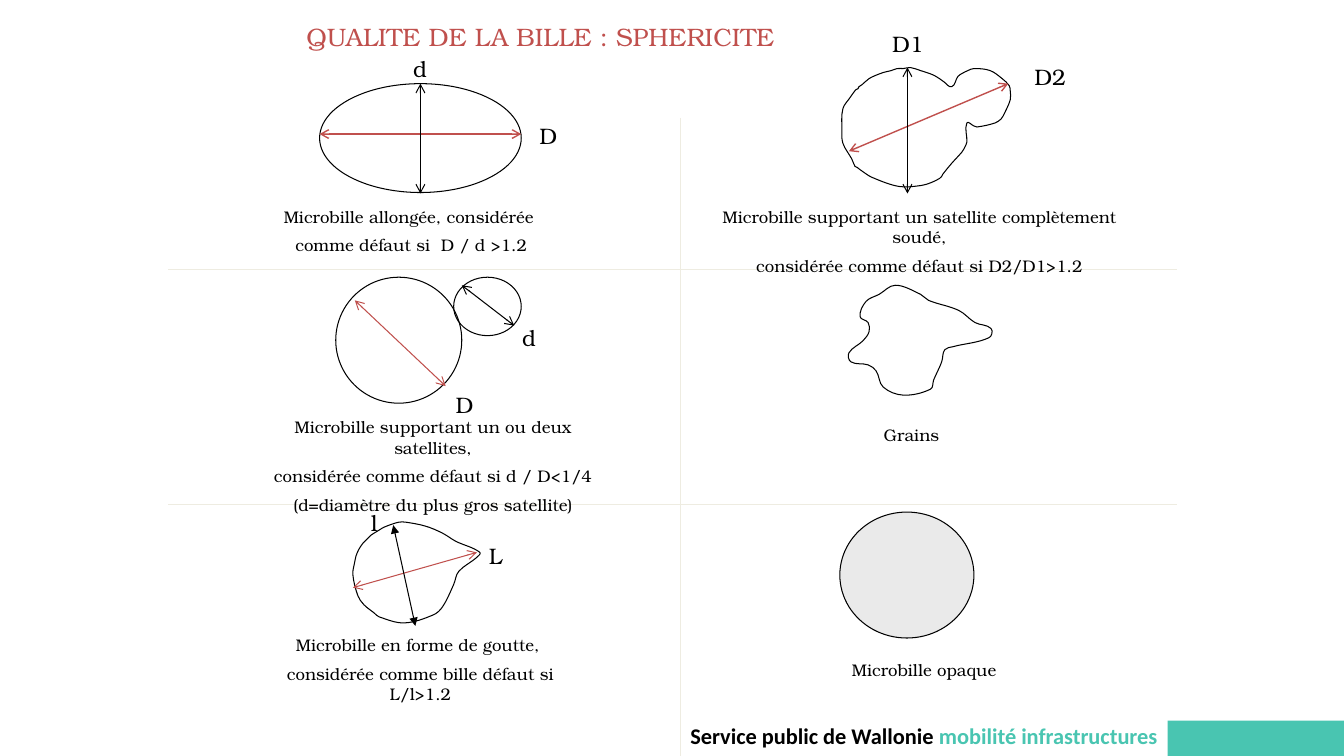
from dataclasses import dataclass
from math import dist

from lxml import etree
from pptx import Presentation
from pptx.dml.color import RGBColor
from pptx.enum.shapes import MSO_CONNECTOR, MSO_SHAPE
from pptx.enum.text import MSO_ANCHOR, MSO_AUTO_SIZE, PP_ALIGN
from pptx.oxml.ns import qn
from pptx.shapes.shapetree import SlideShapes
from pptx.util import Inches, Pt

BLACK = RGBColor(0x00, 0x00, 0x00)
RED = RGBColor(0xC0, 0x50, 0x4D)
TEAL = RGBColor(0x49, 0xC5, 0xB1)
GREY = RGBColor(0xEA, 0xEA, 0xEA)
IVORY = RGBColor(0xEE, 0xEC, 0xE1)
OVAL, RECTANGLE = MSO_SHAPE.OVAL, MSO_SHAPE.RECTANGLE
STRAIGHT = MSO_CONNECTOR.STRAIGHT
LEFT, CENTER, RIGHT = PP_ALIGN.LEFT, PP_ALIGN.CENTER, PP_ALIGN.RIGHT
MIDDLE, TOP = MSO_ANCHOR.MIDDLE, MSO_ANCHOR.TOP
FIT = MSO_AUTO_SIZE.SHAPE_TO_FIT_TEXT
SERIF = "TeX Gyre Bonum"

GRID_LEFT, GRID_MIDDLE, GRID_RIGHT = 1.67, 6.75, 11.67
ROW_TOPS = (0.33, 2.67, 5)

DROP = [
    (42, 2), (31, 6), (26, 9), (21, 12), (18, 14), (17, 15), (13, 19), (10, 22),
    (6, 28), (3, 35), (2, 40), (0, 53), (5, 74), (11, 83), (21, 91), (26, 95),
    (51, 101), (80, 93), (89, 85), (100, 63), (105, 50), (123, 36), (126, 31),
    (102, 20), (89, 12), (72, 5), (52, 1), (46, 1)]
FUSED = [
    (57, 1), (51, 3), (43, 5), (35, 8), (29, 11), (22, 17), (19, 19), (18, 21),
    (16, 22), (15, 23), (10, 30), (3, 41), (2, 61), (3, 75), (12, 91), (15, 98),
    (17, 99), (21, 102), (32, 109), (59, 118), (81, 117), (91, 114), (99, 110),
    (101, 108), (102, 106), (111, 95), (121, 84), (123, 81), (124, 79), (126, 74),
    (126, 55), (133, 58), (136, 59), (154, 55), (160, 51), (162, 48), (169, 32),
    (169, 23), (168, 18), (161, 11), (149, 3), (133, 1), (127, 3), (121, 6),
    (117, 9), (111, 19), (103, 14), (94, 8), (80, 3), (70, 0), (63, 1)]
GRAIN = [
    (30, 9), (17, 16), (11, 31), (19, 37), (20, 46), (14, 55), (0, 67), (2, 76),
    (19, 79), (27, 85), (34, 101), (54, 109), (81, 103), (84, 94), (92, 76),
    (95, 64), (103, 61), (139, 52), (141, 43), (125, 37), (109, 25), (79, 15),
    (71, 9), (46, 0)]


def control_point(knot, before, after, reach):
    """Return the point a third of reach from the knot, along its tangent."""
    factor = reach / 3 / dist(before, after)
    return tuple(k + (a - b) * factor for k, b, a in zip(knot, before, after))


def round_off(outline, knots):
    """Turn the straight segments of a closed outline into cubic curves."""
    left, top = (min(axis) for axis in zip(*knots))
    segments = list(outline._element.iter(qn("a:lnTo")))
    for i, segment in enumerate(segments):
        before, start, end, after = (knots[(i + k) % len(knots)] for k in (-1, 0, 1, 2))
        reach = dist(start, end)
        controls = (control_point(start, before, end, reach),
                    control_point(end, after, start, reach))
        segment.tag = qn("a:cubicBezTo")
        for position, (x, y) in enumerate(controls):
            point = etree.Element(qn("a:pt"), x=str(int(Inches((x - left) / 100))),
                                  y=str(int(Inches((y - top) / 100))))
            segment.insert(position, point)


def style_shape(shape, fill=None, line=BLACK):
    """Give a shape a flat fill and a thin line, or none of either."""
    shape.shadow.inherit = False
    if fill is None:
        shape.fill.background()
    else:
        shape.fill.solid()
        shape.fill.fore_color.rgb = fill
    if line is None:
        shape.line.fill.background()
    else:
        shape.line.color.rgb = line
        shape.line.width = Pt(0.75)


def add_line(shapes, ends, color, width):
    """Draw a straight line without shadow and return it with its outline element."""
    line = shapes.add_connector(STRAIGHT, *map(Inches, ends))
    line.line.color.rgb = color
    line.line.width = Pt(width)
    etree.SubElement(line._element.spPr, qn("a:effectLst"))
    return line._element.spPr.find(qn("a:ln"))


def add_text(shapes, box, paragraphs, size, align=LEFT, font=SERIF, bold=False, anchor=TOP):
    """Write paragraphs, each a list of text and colour pairs."""
    frame = shapes.add_textbox(*map(Inches, box)).text_frame
    for name, value in {"word_wrap": True, "auto_size": FIT, "vertical_anchor": anchor}.items():
        setattr(frame, name, value)
    for i, runs in enumerate(paragraphs):
        paragraph = frame.add_paragraph() if i else frame.paragraphs[0]
        paragraph.alignment = align
        if i:
            paragraph.space_before = Pt(size / 2)
        for text, color in runs:
            run = paragraph.add_run()
            run.text = text
            for name, value in {"name": font, "size": Pt(size), "bold": bold}.items():
                setattr(run.font, name, value)
            run.font.color.rgb = color


@dataclass
class Cell:
    """A cell of the defect grid; its parts are placed from its top left corner."""
    shapes: SlideShapes
    left: float
    top: float

    def ellipse(self, x, y, width, height, fill=None):
        """Draw a round bead."""
        box = (self.left + x, self.top + y, width, height)
        style_shape(self.shapes.add_shape(OVAL, *map(Inches, box)), fill)

    def outline(self, x, y, knots):
        """Draw an irregular bead through knots in hundredths of an inch."""
        builder = self.shapes.build_freeform(*knots[0], scale=Inches(0.01))
        builder.add_line_segments(knots[1:] + knots[:1], close=True)
        bead = builder.convert_to_shape(Inches(self.left + x), Inches(self.top + y))
        for point in bead._element.iter(qn("a:pt")):
            for axis in ("x", "y"):
                point.set(axis, str(int(point.get(axis)) * int(Inches(0.01))))
        outline = bead._element.spPr.find(".//" + qn("a:path"))
        outline.set("w", str(int(bead.width)))
        outline.set("h", str(int(bead.height)))
        round_off(bead, knots)
        style_shape(bead)

    def diameter(self, x1, y1, x2, y2, color=BLACK, width=0.75, tip="arrow"):
        """Draw a double-headed arrow across a bead."""
        ends = (self.left + x1, self.top + y1, self.left + x2, self.top + y2)
        arrow = add_line(self.shapes, ends, color, width)
        for end in ("a:headEnd", "a:tailEnd"):
            etree.SubElement(arrow, qn(end), type=tip)

    def label(self, x, y, text, width=0.42):
        """Name a diameter."""
        box = (self.left + x, self.top + y, width, 0.37)
        add_text(self.shapes, box, [[(text, BLACK)]], 16)

    def caption(self, x, y, width, *lines):
        """Write the centred description of the defect."""
        box = (self.left + x, self.top + y, width, 0.3 * len(lines))
        add_text(self.shapes, box, [[(line, BLACK)] for line in lines], 12, CENTER)


def draw_elongated(cell):
    """Draw the elongated bead."""
    cell.ellipse(1.5, 0.5, 2, 1.08)
    cell.caption(0.91, 1.67, 3, "Microbille allongée, considérée ", "comme défaut si  D / d >1.2")
    cell.diameter(1.5, 1, 3.5, 1, RED, 1)
    cell.label(3.58, 0.83, "D")
    cell.diameter(2.5, 0.5, 2.5, 1.59)
    cell.label(2.33, 0.17, "d", 0.33)


def draw_fused(cell):
    """Draw the bead with a fully fused satellite."""
    cell.outline(1.58, 0.34, FUSED)
    cell.caption(0.08, 1.67, 4.58, "Microbille supportant un satellite complètement soudé,",
                 "considérée comme défaut si D2/D1>1.2")
    cell.diameter(1.67, 1.17, 3.25, 0.5, RED, 1)
    cell.label(3.41, 0.25, "D2", 0.58)
    cell.diameter(2.25, 0.34, 2.25, 1.59)
    cell.label(2, -0.08, "D1", 0.58)


def draw_satellite(cell):
    """Draw the bead with a touching satellite."""
    cell.ellipse(1.66, 0.08, 1.25, 1.25)
    cell.ellipse(2.83, 0.08, 0.67, 0.58)
    cell.caption(0.75, 1.42, 3.75, "Microbille supportant un ou deux satellites,",
                 "considérée comme défaut si d / D<1/4", "(d=diamètre du plus gros satellite)")
    cell.diameter(1.85, 0.31, 2.75, 1.16, RED)
    cell.label(2.75, 1.16, "D", 0.67)
    cell.diameter(2.91, 0.16, 3.43, 0.56)
    cell.label(3.41, 0.5, "d", 0.33)


def draw_grain(cell):
    """Draw the angular grain."""
    cell.outline(1.67, 0.16, GRAIN)
    cell.caption(0.83, 1.49, 2.92, "Grains")


def draw_drop(cell):
    """Draw the drop-shaped bead."""
    cell.outline(1.83, 0.17, DROP)
    cell.caption(0.75, 1.25, 3.5, "Microbille en forme de goutte, ",
                 "considérée comme bille défaut si L/l>1.2")
    cell.diameter(3.06, 0.48, 1.83, 0.83, RED)
    cell.label(3.08, 0.33, "L")
    cell.diameter(2.23, 0.21, 2.45, 1.21, tip="triangle")
    cell.label(1.91, 0, "l", 0.33)


def draw_opaque(cell):
    """Draw the opaque bead."""
    cell.ellipse(1.58, 0.08, 1.33, 1.25, GREY)
    cell.caption(0.75, 1.5, 3.33, "Microbille opaque")


def draw_grid(shapes):
    """Draw the dotted separators and fill the six cells."""
    separators = [(GRID_MIDDLE, 1.17, GRID_MIDDLE, 7.5)]
    separators += [(GRID_LEFT, top, GRID_RIGHT, top) for top in ROW_TOPS[1:]]
    for ends in separators:
        etree.SubElement(add_line(shapes, ends, IVORY, 0.25), qn("a:prstDash"), val="sysDot")
    rows = ((draw_elongated, draw_fused), (draw_satellite, draw_grain), (draw_drop, draw_opaque))
    for top, row in zip(ROW_TOPS, rows):
        for left, draw in zip((GRID_LEFT, GRID_MIDDLE), row):
            draw(Cell(shapes, left, top))


def draw_footer(shapes, left, top):
    """Draw the teal corner block and the name to its left."""
    block = shapes.add_shape(RECTANGLE, *map(Inches, (left, top, 1.75, 0.35)))
    style_shape(block, TEAL, None)
    signature = [("Service public de Wallonie ", BLACK), ("mobilité infrastructures", TEAL)]
    add_text(shapes, (left - 5.95, top - 0.04, 5.95, 0.37), [signature], 16,
             RIGHT, "Calibri", True, MIDDLE)


def main():
    """Build and save the slide."""
    deck = Presentation()
    deck.slide_width, deck.slide_height = Inches(13.33), Inches(7.5)
    shapes = deck.slides.add_slide(deck.slide_layouts[6]).shapes
    draw_footer(shapes, 11.58, 7.15)
    draw_grid(shapes)
    add_text(shapes, (2.94, 0.16, 8.73, 0.4), [[("QUALITE DE LA BILLE : SPHERICITE", RED)]], 18)
    deck.save("out.pptx")


if __name__ == "__main__":
    main()
